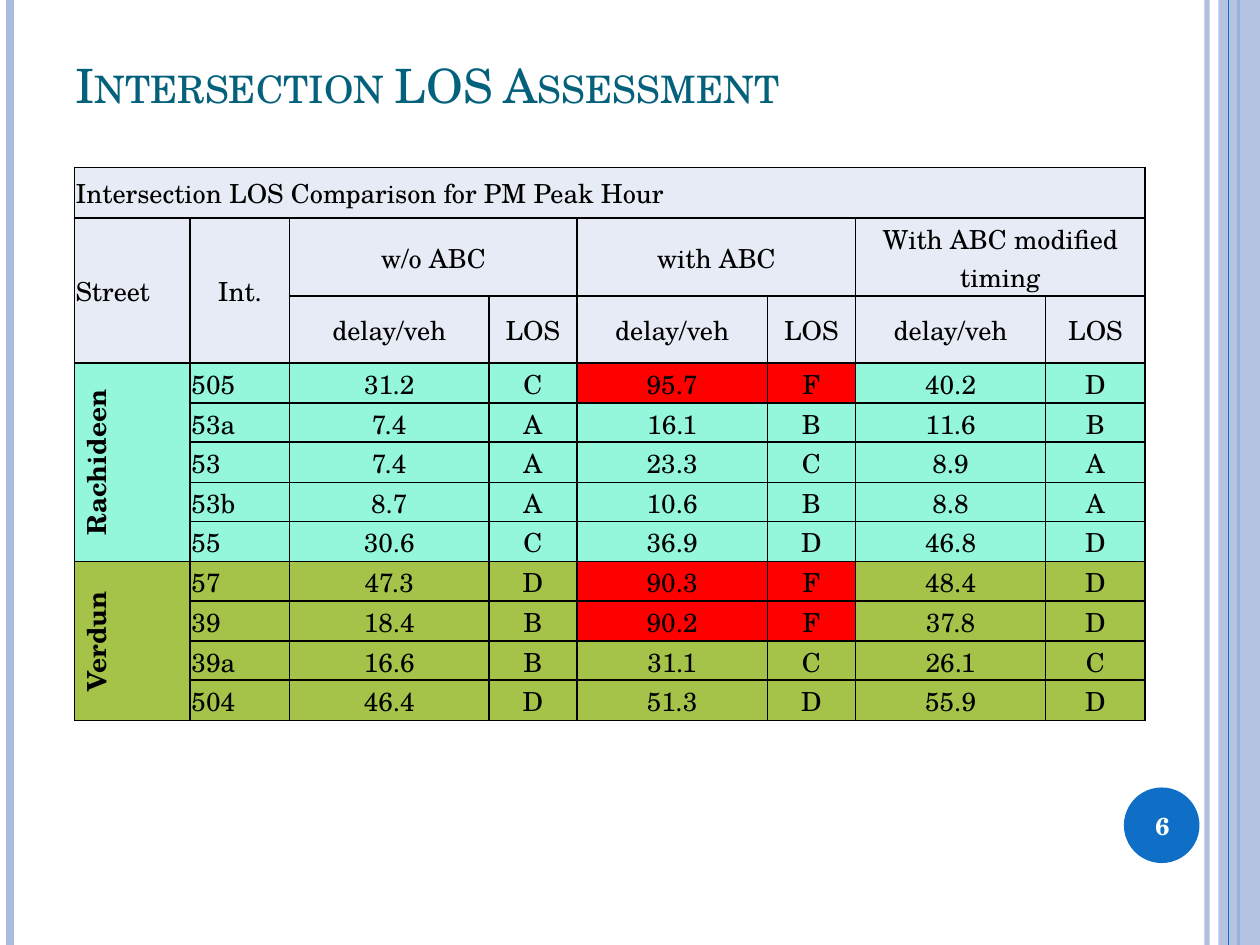
import pptx
import pptx.dml.color
import pptx.enum.shapes
import pptx.enum.text
import pptx.oxml
import pptx.oxml.ns
import pptx.util
from pptx.util import Inches

COLORS = {
    "pale": "ABBBDF", "blue": "0F6FC6", "title": "04617B", "white": "FFFFFF",
    "black": "000000", "header": "E7EBF5", "mint": "94F7DC", "olive": "A5C249",
    "red": "FF0000",
}
FONT = "TeX Gyre Schola"
NAMESPACE = pptx.oxml.ns.nsdecls("a")
ALIGN = pptx.enum.text.PP_ALIGN
ANCHOR = pptx.enum.text.MSO_ANCHOR
SHAPE = pptx.enum.shapes.MSO_SHAPE


def rgb(name):
    return pptx.dml.color.RGBColor.from_string(COLORS[name])


def write(frame, text, size, color, align=ALIGN.LEFT, bold=False):
    paragraph = frame.paragraphs[0]
    paragraph.alignment = align
    span = paragraph.add_run()
    span.text = text
    span.font.name = FONT
    span.font.size = pptx.util.Pt(size)
    span.font.bold = bold
    span.font.color.rgb = rgb(color)
    return span


deck = pptx.Presentation()
deck.slide_width, deck.slide_height = Inches(10), Inches(7.5)
page = deck.slides.add_slide(deck.slide_layouts[6])

# Side band, page number disc and vertical rules, from back to front
decorations = [
    ("rule", 9.58, "pale", 3, 93),
    ("rule", 0.08, "pale", 4.5, 100),
    ("rule", 9.83, "blue", 1.5, 100),
    (SHAPE.RECTANGLE, (9.67, 0, 0.33, 7.5), "pale", 0, 87),
    ("rule", 9.75, "blue", 0.75, 100),
    (SHAPE.OVAL, (8.92, 6.25, 0.6, 0.6), "blue", 0, 100),
]
for kind, place, color, width, opacity in decorations:
    if kind == "rule":
        item = page.shapes.add_connector(
            pptx.enum.shapes.MSO_CONNECTOR.STRAIGHT,
            Inches(place), 0, Inches(place), deck.slide_height)
        item.line.width = pptx.util.Pt(width)
        item.line.color.rgb = rgb(color)
        item._element.spPr.append(pptx.oxml.parse_xml(f"<a:effectLst {NAMESPACE}/>"))
    else:
        item = page.shapes.add_shape(kind, *map(Inches, place))
        item.shadow.inherit = False
        item.line.fill.background()
        item.fill.solid()
        item.fill.fore_color.rgb = rgb(color)
    if opacity < 100:
        paint = item._element.spPr.find(".//" + pptx.oxml.ns.qn("a:srgbClr"))
        paint.append(pptx.oxml.parse_xml(
            f'<a:alpha {NAMESPACE} val="{opacity * 1000}"/>'))

# Title
box = page.shapes.add_textbox(Inches(0.5), Inches(0.42), Inches(8.17), Inches(0.53))
box.text_frame.word_wrap = True
box.text_frame.vertical_anchor = ANCHOR.BOTTOM
title = write(box.text_frame, "Intersection LOS Assessment", 27, "title")
title.font._element.set("cap", "small")

# Page number
box = page.shapes.add_textbox(Inches(8.89), Inches(6.27), Inches(0.67), Inches(0.57))
box.text_frame.word_wrap = True
box.text_frame.vertical_anchor = ANCHOR.MIDDLE
write(box.text_frame, "6", 14, "white", ALIGN.CENTER, True)

# Table content; None marks a cell covered by a merge
columns = [0.92, 0.79, 1.58, 0.7, 1.51, 0.7, 1.51, 0.79]
heights = [0.4, 0.62, 0.53] + [0.32, 0.31] * 4 + [0.32]
rows = [
    ["Intersection LOS Comparison for PM Peak Hour"] + [None] * 7,
    ["Street", "Int.", "w/o ABC", None, "with ABC", None,
     "With ABC modified timing", None],
    [None, None] + ["delay/veh", "LOS"] * 3,
    ["Rachideen", "505", "31.2", "C", "95.7", "F", "40.2", "D"],
    [None, "53a", "7.4", "A", "16.1", "B", "11.6", "B"],
    [None, "53", "7.4", "A", "23.3", "C", "8.9", "A"],
    [None, "53b", "8.7", "A", "10.6", "B", "8.8", "A"],
    [None, "55", "30.6", "C", "36.9", "D", "46.8", "D"],
    ["Verdun", "57", "47.3", "D", "90.3", "F", "48.4", "D"],
    [None, "39", "18.4", "B", "90.2", "F", "37.8", "D"],
    [None, "39a", "16.6", "B", "31.1", "C", "26.1", "C"],
    [None, "504", "46.4", "D", "51.3", "D", "55.9", "D"],
]
merges = [(0, 0, 0, 7), (1, 0, 2, 0), (1, 1, 2, 1), (1, 2, 1, 3),
          (1, 4, 1, 5), (1, 6, 1, 7), (3, 0, 7, 0), (8, 0, 11, 0)]

table = page.shapes.add_table(len(rows), len(columns), Inches(0.59), Inches(1.33),
                              Inches(sum(columns)), Inches(sum(heights))).table
table.first_row = table.horz_banding = False
for column, width in zip(table.columns, columns):
    column.width = Inches(width)
for row, height in zip(table.rows, heights):
    row.height = Inches(height)
for top, left, bottom, right in merges:
    table.cell(top, left).merge(table.cell(bottom, right))

# Cell text, fills and borders
for r, values in enumerate(rows):
    band = "header" if r < 3 else "mint" if r < 8 else "olive"
    for c, text in enumerate(values):
        cell = table.cell(r, c)
        cell.margin_left = cell.margin_right = cell.margin_top = Inches(0.01)
        cell.margin_bottom = 0
        cell.vertical_anchor = ANCHOR.MIDDLE
        failing = c in (4, 5) and values[5] == "F"
        street = c == 0 and r >= 3
        properties = cell._tc.get_or_add_tcPr()
        for side in ("lnL", "lnR", "lnT", "lnB"):
            properties.append(pptx.oxml.parse_xml(
                f'<a:{side} {NAMESPACE} w="12700"><a:solidFill>'
                f'<a:srgbClr val="{COLORS["black"]}"/></a:solidFill></a:{side}>'))
        cell.fill.solid()
        cell.fill.fore_color.rgb = rgb("red" if failing else band)
        if street:
            properties.set("vert", "vert270")
        if text is not None:
            flush = c == 0 and not street or c == 1 and r >= 3
            write(cell.text_frame, text, 15, "black",
                  ALIGN.LEFT if flush else ALIGN.CENTER, street)

deck.save("out.pptx")
